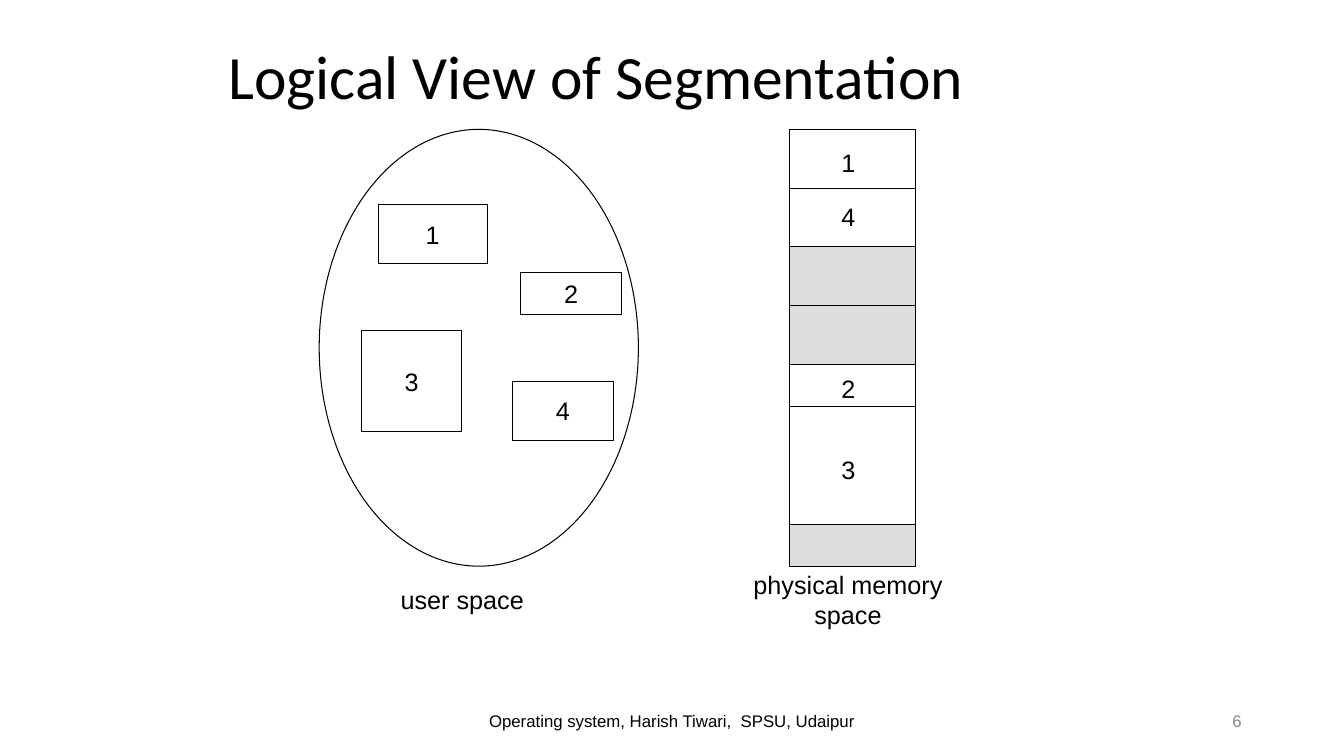
from lxml.etree import SubElement
from pptx import Presentation
from pptx.dml.color import RGBColor
from pptx.enum.shapes import MSO_CONNECTOR, MSO_SHAPE
from pptx.enum.text import MSO_ANCHOR, PP_ALIGN
from pptx.oxml.ns import qn
from pptx.util import Inches, Pt

BLACK = RGBColor(0x00, 0x00, 0x00)
WHITE = RGBColor(0xFF, 0xFF, 0xFF)
FREE = RGBColor(0xDD, 0xDD, 0xDD)
MUTED = RGBColor(0x89, 0x89, 0x89)

COLS, ROWS = 160, 90
MEM_LEFT, MEM_WIDTH = 94, 15


class SlideKit:
    base = {"name": "Arial", "size": Pt(18)}
    line_width = Pt(0.75)

    def __init__(self, prs):
        self.slide = prs.slides.add_slide(prs.slide_layouts[6])
        self.col = prs.slide_width / COLS
        self.row = prs.slide_height / ROWS

    def grid(self, x, y, w, h):
        return [round(v * unit) for v, unit in
                zip((x, y, w, h), (self.col, self.row) * 2)]

    def label(self, sp, text, color=BLACK, align=PP_ALIGN.CENTER,
              wrap=False, spacing=None, **font):
        tf = sp.text_frame
        p = tf.paragraphs[0]
        r = p.add_run()
        r.text = text
        r.font.color.rgb = color
        formats = (
            (tf, {"word_wrap": wrap, "vertical_anchor": MSO_ANCHOR.MIDDLE}),
            (p, {"alignment": align, "line_spacing": spacing}),
            (r.font, {**self.base, **font}),
        )
        for target, values in formats:
            for key, value in values.items():
                setattr(target, key, value)

    def text(self, box, text, **style):
        sp = self.slide.shapes.add_textbox(*self.grid(*box))
        self.label(sp, text, **style)

    def shape(self, box, text="", fill=WHITE, kind=MSO_SHAPE.RECTANGLE):
        sp = self.slide.shapes.add_shape(kind, *self.grid(*box))
        sp.shadow.inherit = False
        sp.fill.solid()
        sp.fill.fore_color.rgb = fill
        sp.line.color.rgb = BLACK
        sp.line.width = self.line_width
        if text:
            self.label(sp, text)

    def rule(self, x, y, w):
        left, top, width, _ = self.grid(x, y, w, 0)
        sp = self.slide.shapes.add_connector(
            MSO_CONNECTOR.STRAIGHT, left, top, left + width, top)
        sp.line.color.rgb = BLACK
        sp.line.width = self.line_width
        SubElement(sp._element.spPr, qn("a:effectLst"))


def main():
    prs = Presentation()
    prs.slide_width, prs.slide_height = Inches(13.33), Inches(7.5)
    s = SlideKit(prs)

    s.text((26, 3.6, 108, 11.8), "Logical View of Segmentation", wrap=True,
           align=PP_ALIGN.LEFT, spacing=0.9, name="Calibri", size=Pt(44))

    s.shape((38, 15.4, 38, 52), kind=MSO_SHAPE.OVAL)
    segments = {"1": (45, 24.4, 13, 7), "3": (43, 39.4, 12, 12),
                "2": (62, 32.4, 12, 5), "4": (61, 45.4, 12, 7)}
    for name, box in segments.items():
        s.shape(box, name)

    top = 15.4
    for height, fill, split in ((14, WHITE, 7), (14, FREE, 7),
                                (19, WHITE, 5), (5, FREE, None)):
        s.shape((MEM_LEFT, top, MEM_WIDTH, height), fill=fill)
        if split:
            s.rule(MEM_LEFT, top + split, MEM_WIDTH)
        top += height
    for name, y in (("1", 16.9), ("4", 23.4), ("2", 43.9), ("3", 53.5)):
        s.text((99, y, 4, 4.8), name)

    s.text((46.5, 69, 17.9, 4.8), "user space ")
    s.text((84.1, 69, 33.7, 4.8), "physical memory space")

    s.text((53, 83.4, 54, 4.8), "Operating system, Harish Tiwari,  SPSU, Udaipur",
           wrap=True, size=Pt(12))
    s.text((113, 83.4, 36, 4.8), "6", wrap=True, color=MUTED,
           align=PP_ALIGN.RIGHT, size=Pt(12))
    prs.save("out.pptx")


if __name__ == "__main__":
    main()
